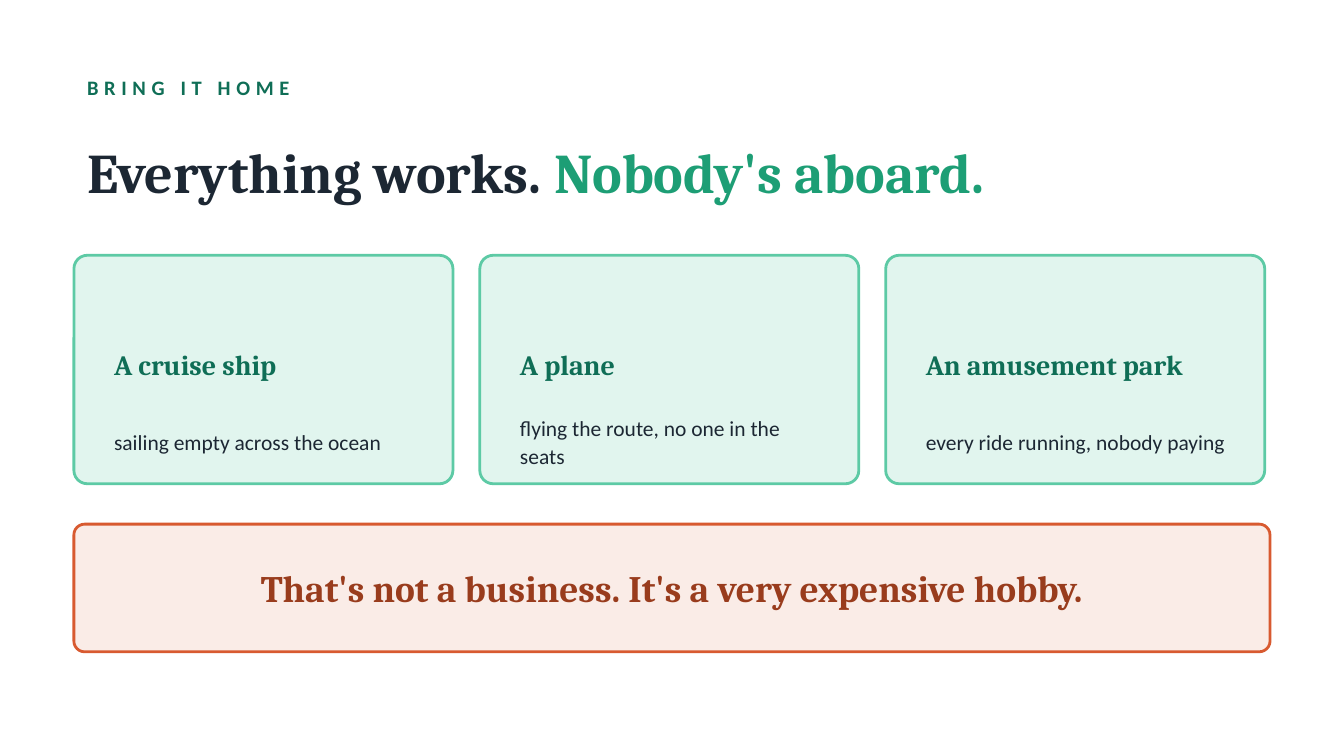
"""Build the slide of three empty rides and a punch line."""
import pptx
import pptx.util
import pptx.dml.color
import pptx.enum.shapes
import pptx.enum.text

Inches = pptx.util.Inches
RGB = pptx.dml.color.RGBColor
ALIGN = pptx.enum.text.PP_ALIGN

INK = RGB(0x1C, 0x27, 0x33)
PINE = RGB(0x0F, 0x6E, 0x56)
GREEN = RGB(0x1D, 0x9E, 0x75)
MINT = RGB(0x5D, 0xCA, 0xA5)
PALE = RGB(0xE1, 0xF5, 0xEE)
RUST = RGB(0x99, 0x3C, 0x1D)
CORAL = RGB(0xD8, 0x5A, 0x30)
BLUSH = RGB(0xFA, 0xEC, 0xE7)

LEFT, WIDTH = 0.55, 8.9
CARD, GAP, PAD = 2.82, 0.2, 0.2
TOP, TALL = 1.9, 1.7
BASE, DEEP = 3.9, 0.95

deck = pptx.Presentation()
deck.slide_width = Inches(10)
deck.slide_height = deck.slide_width * 9 // 16
slide = deck.slides.add_slide(deck.slide_layouts[6])


def add_panel(x, y, w, h, curve, fill, edge):
    kind = pptx.enum.shapes.MSO_SHAPE.ROUNDED_RECTANGLE
    panel = slide.shapes.add_shape(kind, Inches(x), Inches(y), Inches(w), Inches(h))
    panel.adjustments[0] = curve / h
    panel.shadow.inherit = False
    panel.fill.solid()
    panel.fill.fore_color.rgb = fill
    panel.line.color.rgb = edge
    panel.line.width = pptx.util.Pt(1.5)


def add_text(x, y, w, h, parts, size, face, bold=True, align=ALIGN.LEFT):
    box = slide.shapes.add_textbox(Inches(x), Inches(y), Inches(w), Inches(h))
    frame = box.text_frame
    frame.word_wrap = True
    frame.vertical_anchor = pptx.enum.text.MSO_ANCHOR.MIDDLE
    line = frame.paragraphs[0]
    line.alignment = align
    for words, color in parts:
        run = line.add_run()
        run.text = words
        run.font.size = pptx.util.Pt(size)
        run.font.name = face
        run.font.bold = bold
        run.font.color.rgb = color
    return line


label = add_text(LEFT, 0.5, WIDTH, 0.3, [("BRING IT HOME", PINE)], 11, "Calibri")
label.runs[0].font._element.set("spc", "300")

title = [("Everything works. ", INK), ("Nobody's aboard.", GREEN)]
add_text(LEFT, 0.85, WIDTH, 0.85, title, 30, "Cambria")

cards = [
    ("A cruise ship", "sailing empty across the ocean"),
    ("A plane", "flying the route, no one in the seats"),
    ("An amusement park", "every ride running, nobody paying"),
]
for col, (head, note) in enumerate(cards):
    x = LEFT + col * (CARD + GAP)
    add_panel(x, TOP, CARD, TALL, 0.1, PALE, MINT)
    add_text(x + PAD, TOP + 0.46, 2.45, 0.7, [(head, PINE)], 15, "Cambria")
    body = add_text(x + PAD, TOP + 1.18, 2.45, 0.4, [(note, INK)], 11.5, "Calibri", False)
    body.line_spacing = 1.08

add_panel(LEFT, BASE, WIDTH, DEEP, 0.08, BLUSH, CORAL)
punch = [("That's not a business. It's a very expensive hobby.", RUST)]
add_text(LEFT + 0.25, BASE, WIDTH - 0.5, DEEP, punch, 20, "Cambria", align=ALIGN.CENTER)

deck.save("out.pptx")
